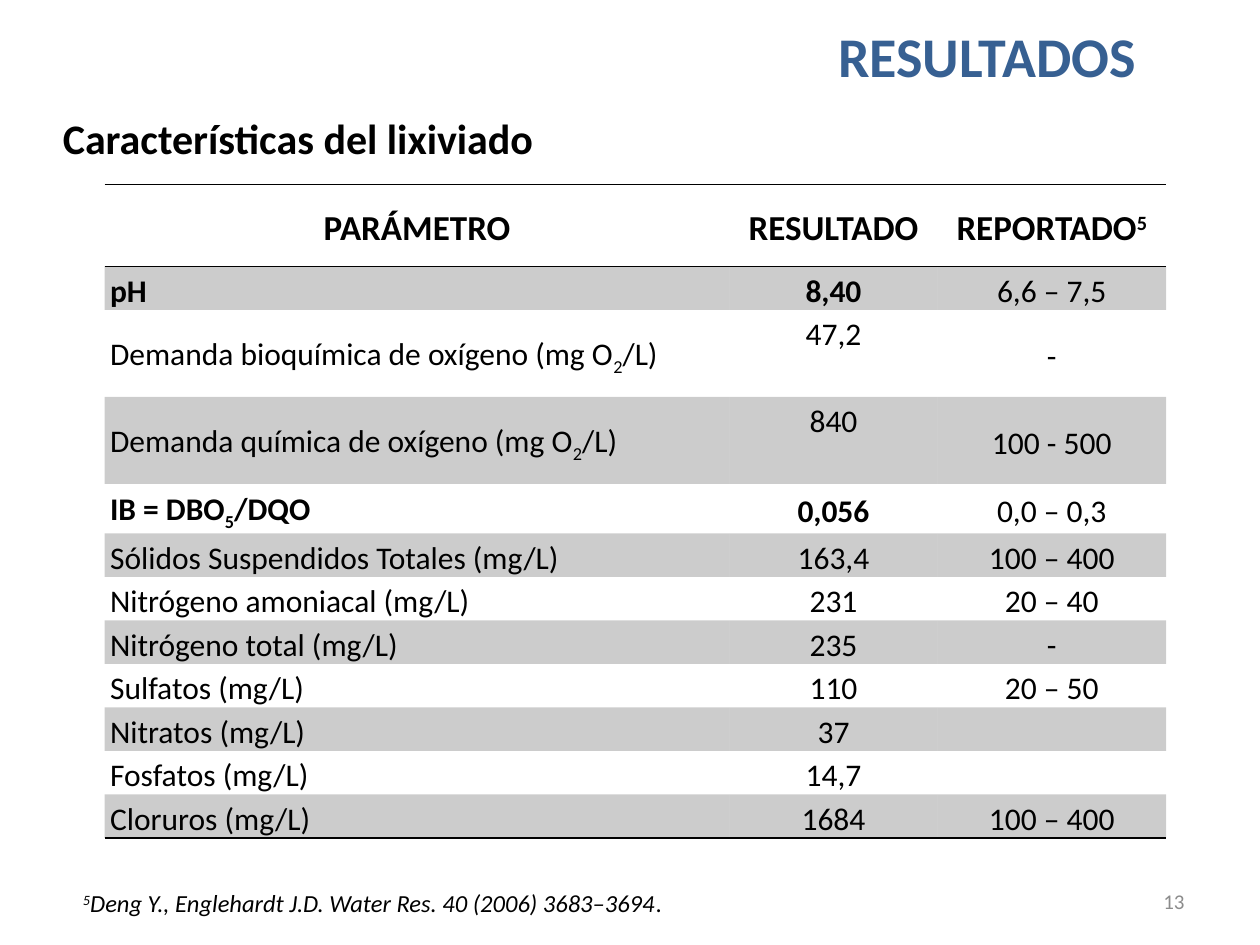
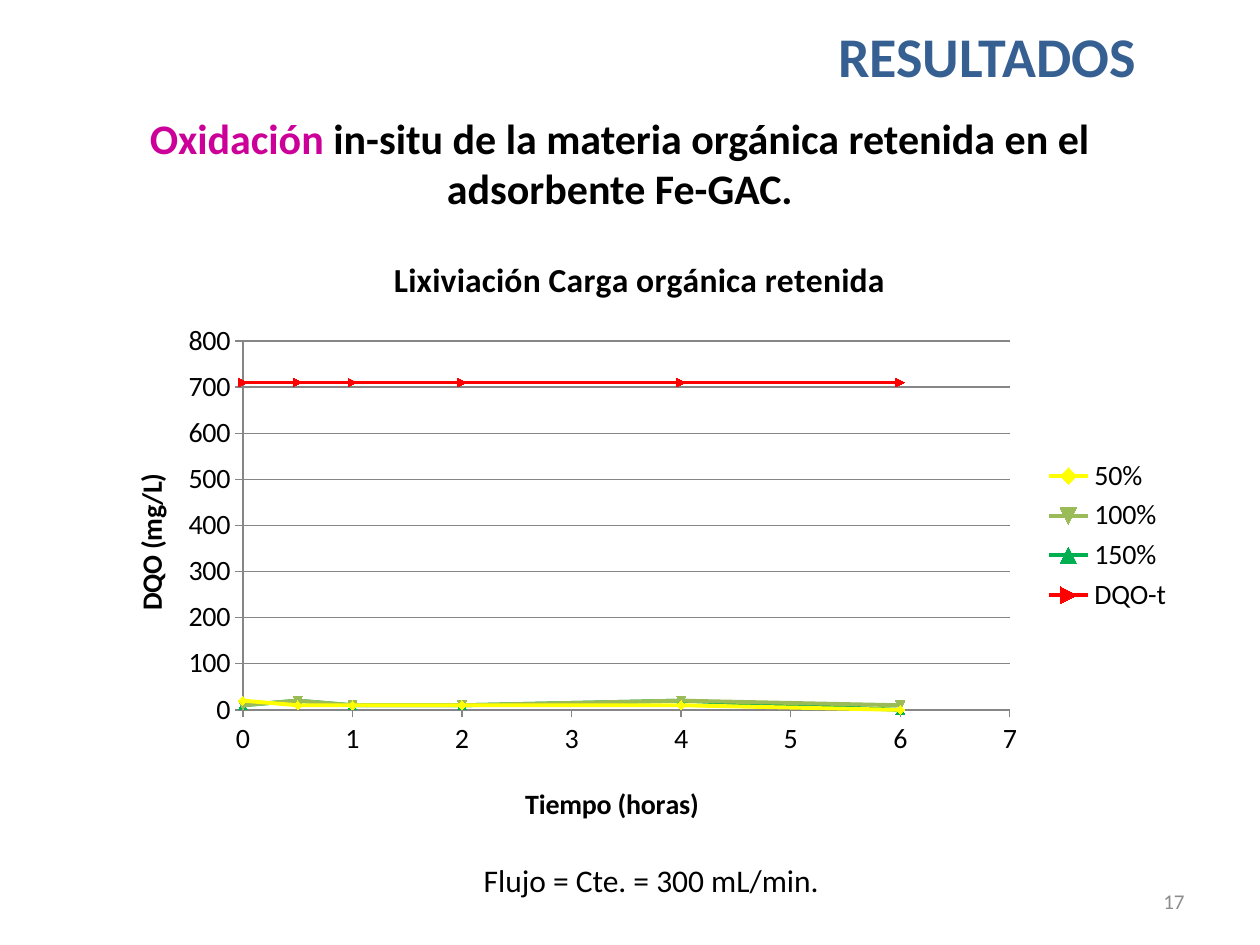
"""Builds two result slides: leachate characteristics and in-situ oxidation."""
from dataclasses import dataclass

from lxml import etree
from pptx import Presentation
from pptx.chart.data import XyChartData
from pptx.dml.color import RGBColor
from pptx.enum.chart import XL_CHART_TYPE, XL_LEGEND_POSITION, XL_TICK_MARK
from pptx.enum.text import MSO_ANCHOR, PP_ALIGN
from pptx.oxml.ns import qn
from pptx.util import Pt

LEFT, CENTER, RIGHT = PP_ALIGN.LEFT, PP_ALIGN.CENTER, PP_ALIGN.RIGHT
TOP, MIDDLE = MSO_ANCHOR.TOP, MSO_ANCHOR.MIDDLE
SMOOTH_SCATTER = XL_CHART_TYPE.XY_SCATTER_SMOOTH
LEGEND_RIGHT = XL_LEGEND_POSITION.RIGHT
TICK_OUTSIDE = XL_TICK_MARK.OUTSIDE

FONT = "Calibri"
BLACK, TITLE_BLUE, MAGENTA = "000000", "376092", "CC0099"
NUMBER_GRAY, AXIS_GRAY = "8C8C8C", "868686"
SUPERSCRIPT, SUBSCRIPT = 30, -25
PLAIN_TABLE_STYLE = "{2D5ABB26-0587-4C30-8999-92F81FD0307C}"
BAND_OPACITY = 20
HEADER_HEIGHT, ROW_HEIGHT = 46.8, 24.86


@dataclass(frozen=True)
class Run:
    """A piece of text with its own format."""
    text: str
    color: str = BLACK
    bold: bool = False
    italic: bool = False
    baseline: int = 0


@dataclass(frozen=True)
class Box:
    """A rectangle in points."""
    left: float
    top: float
    width: float
    height: float

    def lengths(self) -> tuple:
        """Return the four lengths for a shape call."""
        return Pt(self.left), Pt(self.top), Pt(self.width), Pt(self.height)


@dataclass(frozen=True)
class ResultRow:
    """One measured parameter of the leachate."""
    parameter: str
    result: str
    reported: str = ""
    subscript: str = ""
    unit: str = ""
    bold: bool = False
    height: float = ROW_HEIGHT
    result_anchor: MSO_ANCHOR = MIDDLE


@dataclass(frozen=True)
class Curve:
    """One measured series of the chart."""
    name: str
    color: str
    values: tuple


RESULT_ROWS = (
    ResultRow("pH", "8,40", "6,6 – 7,5", bold=True),
    ResultRow("Demanda bioquímica de oxígeno (mg O", "47,2", "-", "2", "/L)",
              height=2 * ROW_HEIGHT, result_anchor=TOP),
    ResultRow("Demanda química de oxígeno (mg O", "840", "100 - 500", "2", "/L)",
              height=2 * ROW_HEIGHT, result_anchor=TOP),
    ResultRow("IB = DBO", "0,056", "0,0 – 0,3", "5", "/DQO", bold=True, height=28),
    ResultRow("Sólidos Suspendidos Totales (mg/L)", "163,4", "100 – 400"),
    ResultRow("Nitrógeno amoniacal (mg/L)", "231", "20 – 40"),
    ResultRow("Nitrógeno total (mg/L)", "235", "-"),
    ResultRow("Sulfatos (mg/L)", "110", "20 – 50"),
    ResultRow("Nitratos (mg/L)", "37"),
    ResultRow("Fosfatos (mg/L)", "14,7"),
    ResultRow("Cloruros (mg/L)", "1684", "100 – 400"),
)
HOURS = (0, 0.5, 1, 2, 4, 6)
CURVES = (
    Curve("50%", "FFFF00", (20, 10, 10, 10, 10, 0)),
    Curve("100%", "9BBB59", (10, 20, 10, 10, 20, 10)),
    Curve("150%", "00B050", (10, 20, 10, 10, 20, 0)),
    Curve("DQO-t", "FF0000", (710,) * len(HOURS)),
)


def rgb(color: str) -> RGBColor:
    """Turn a hex string into a colour."""
    return RGBColor.from_string(color)


def format_font(font, size: float, color: str = BLACK, bold: bool = False,
                italic: bool = False) -> None:
    """Set the deck font with a size, colour and style."""
    font.name, font.size = FONT, Pt(size)
    font.bold, font.italic = bold, italic
    font.color.rgb = rgb(color)


def write_runs(paragraph, runs: tuple, size: float, align=LEFT) -> None:
    """Write formatted runs into a paragraph."""
    paragraph.alignment = align
    for piece in runs:
        run = paragraph.add_run()
        run.text = piece.text
        format_font(run.font, size, piece.color, piece.bold, piece.italic)
        if piece.baseline:
            run._r.get_or_add_rPr().set("baseline", str(piece.baseline * 1000))


def add_text(slide, box: Box, *runs: Run, size: float, align=LEFT, anchor=TOP) -> None:
    """Add a wrapping text box."""
    text_frame = slide.shapes.add_textbox(*box.lengths()).text_frame
    text_frame.word_wrap = True
    text_frame.vertical_anchor = anchor
    write_runs(text_frame.paragraphs[0], runs, size, align)


def add_result_slide(presentation, number: int):
    """Add a blank slide with the shared title and slide number."""
    slide = presentation.slides.add_slide(presentation.slide_layouts[6])
    add_text(slide, Box(462.2, 8.6, 203.8, 46), Run("RESULTADOS", TITLE_BLUE, bold=True),
             size=32, align=CENTER)
    add_text(slide, Box(516.2, 500.4, 167.8, 28.8), Run(str(number), NUMBER_GRAY),
             size=12, align=RIGHT, anchor=MIDDLE)
    return slide


def fill_cell(cell, runs: tuple, size: float, align=CENTER, anchor=MIDDLE,
              borders: tuple = (), banded: bool = False) -> None:
    """Write a cell and set its margins, rules and band."""
    cell.margin_left = cell.margin_right = Pt(3.1)
    cell.margin_top = cell.margin_bottom = 0
    cell.vertical_anchor = anchor
    paragraph = cell.text_frame.paragraphs[0]
    paragraph.line_spacing = 1.15
    paragraph.font.size = Pt(size)
    write_runs(paragraph, runs, size, align)
    properties = cell._tc.get_or_add_tcPr()
    for side in borders:
        line = etree.SubElement(properties, qn(f"a:{side}"), w=str(Pt(1)))
        fill = etree.SubElement(line, qn("a:solidFill"))
        etree.SubElement(fill, qn("a:srgbClr"), val=BLACK)
    if banded:
        cell.fill.solid()
        cell.fill.fore_color.rgb = rgb(BLACK)
        color = properties.find(f"{qn('a:solidFill')}/{qn('a:srgbClr')}")
        etree.SubElement(color, qn("a:alpha"), val=str(BAND_OPACITY * 1000))
    else:
        cell.fill.background()


def add_results_table(slide) -> None:
    """Add the table of leachate parameters."""
    heights = [HEADER_HEIGHT] + [row.height for row in RESULT_ROWS]
    box = Box(59.8, 105.4, 606.6, sum(heights))
    table = slide.shapes.add_table(len(heights), 3, *box.lengths()).table
    table._tbl.tblPr.find(qn("a:tableStyleId")).text = PLAIN_TABLE_STYLE
    table.first_row = table.horz_banding = False
    for column, width in zip(table.columns, (357.1, 118.8, 130.7)):
        column.width = Pt(width)
    for row, height in zip(table.rows, heights):
        row.height = Pt(height)
    headings = (
        (Run("PARÁMETRO", bold=True),),
        (Run("RESULTADO", bold=True),),
        (Run("REPORTADO", bold=True), Run("5", bold=True, baseline=SUPERSCRIPT)),
    )
    for column, runs in enumerate(headings):
        fill_cell(table.cell(0, column), runs, 20, borders=("lnT", "lnB"))
    for index, row in enumerate(RESULT_ROWS, start=1):
        borders = ("lnB",) if index == len(RESULT_ROWS) else ()
        shared = {"size": 18, "borders": borders, "banded": index % 2 == 1}
        parameter = [Run(row.parameter, bold=row.bold)]
        if row.subscript:
            parameter += [Run(row.subscript, bold=row.bold, baseline=SUBSCRIPT),
                          Run(row.unit, bold=row.bold)]
        reported = (Run(row.reported),) if row.reported else ()
        fill_cell(table.cell(index, 0), tuple(parameter), align=LEFT, **shared)
        fill_cell(table.cell(index, 1), (Run(row.result, bold=row.bold),),
                  anchor=row.result_anchor, **shared)
        fill_cell(table.cell(index, 2), reported, **shared)


def place_part(element, position: int, **fractions: float) -> None:
    """Give a chart part a manual layout in fractions of the chart."""
    for old_layout in element.findall(qn("c:layout")):
        element.remove(old_layout)
    layout = etree.Element(qn("c:layout"))
    manual = etree.SubElement(layout, qn("c:manualLayout"))
    if "w" in fractions:
        etree.SubElement(manual, qn("c:layoutTarget"), val="inner")
    for mode in ("xMode", "yMode"):
        etree.SubElement(manual, qn(f"c:{mode}"), val="edge")
    for name, value in fractions.items():
        etree.SubElement(manual, qn(f"c:{name}"), val=str(value))
    element.insert(position, layout)


def format_axis(axis, title: str, maximum: float, unit: float, left: float,
                top: float) -> None:
    """Set the scale, lines and placed title of an axis."""
    axis.minimum_scale, axis.maximum_scale, axis.major_unit = 0, maximum, unit
    axis.major_tick_mark = TICK_OUTSIDE
    axis.format.line.color.rgb = rgb(AXIS_GRAY)
    axis.format.line.width = Pt(0.75)
    format_font(axis.tick_labels.font, 16)
    write_runs(axis.axis_title.text_frame.paragraphs[0], (Run(title, bold=True),), 16, CENTER)
    place_part(axis.axis_title._element, 1, x=left, y=top)


def add_oxidation_chart(slide) -> None:
    """Add the chart of retained organic load against time."""
    data = XyChartData()
    for curve in CURVES:
        series = data.add_series(curve.name)
        for hour, value in zip(HOURS, curve.values):
            series.add_data_point(hour, value)
    box = Box(54, 131.8, 623.5, 348.5)
    chart = slide.shapes.add_chart(SMOOTH_SCATTER, *box.lengths(), data).chart
    format_font(chart.font, 16)
    chart.has_title = True
    write_runs(chart.chart_title.text_frame.paragraphs[0],
               (Run("Lixiviación Carga orgánica retenida", bold=True),), 19.2, CENTER)
    chart.has_legend = True
    chart.legend.position = LEGEND_RIGHT
    chart.legend.include_in_layout = False
    format_font(chart.legend.font, 16)
    time_axis, load_axis = chart.category_axis, chart.value_axis
    format_axis(time_axis, "Tiempo (horas)", 7, 1, 0.39, 0.9)
    format_axis(load_axis, "DQO (mg/L)", 800, 100, 0.03, 0.39)
    load_axis.axis_title.text_frame._txBody.bodyPr.set("rot", "-5400000")
    time_axis.has_major_gridlines = False
    load_axis.has_major_gridlines = True
    gridline = load_axis.major_gridlines.format.line
    gridline.color.rgb = rgb(AXIS_GRAY)
    gridline.width = Pt(0.75)
    plot = chart.plots[0]
    plot.vary_by_categories = False
    place_part(chart._chartSpace.chart.plotArea, 0, x=0.136, y=0.181, w=0.703, h=0.605)
    for index, (series, curve) in enumerate(zip(plot.series, CURVES), start=1):
        series._element.find(qn("c:idx")).set("val", str(index))
        series.smooth = True
        series.format.line.color.rgb = rgb(curve.color)
        series.format.line.width = Pt(2.25)
        series.marker.size = 5
        series.marker.format.fill.solid()
        series.marker.format.fill.fore_color.rgb = rgb(curve.color)
        series.marker.format.line.color.rgb = rgb(curve.color)


def build_characteristics_slide(presentation) -> None:
    """Build the slide with the leachate characteristics."""
    slide = add_result_slide(presentation, 13)
    add_text(slide, Box(28.8, 60.5, 637.2, 36), Run("Características del lixiviado", bold=True),
             size=24)
    add_results_table(slide)
    add_text(slide, Box(40.3, 504, 671, 24.5),
             Run("5", italic=True, baseline=SUPERSCRIPT),
             Run("Deng Y., Englehardt J.D. Water Res. 40 (2006) 3683–3694", italic=True),
             Run("."), size=14)


def build_oxidation_slide(presentation) -> None:
    """Build the slide with the oxidation chart."""
    slide = add_result_slide(presentation, 17)
    add_text(slide, Box(42.5, 60.5, 623.5, 65.5),
             Run("Oxidación ", MAGENTA, bold=True),
             Run("in-situ de la materia orgánica retenida en el adsorbente Fe-GAC.", bold=True),
             size=24, align=CENTER)
    add_text(slide, Box(269.3, 488.2, 232.6, 51), Run("Flujo = Cte. = 300 mL/min."), size=18)
    add_oxidation_chart(slide)


def main() -> None:
    """Build and save the presentation."""
    presentation = Presentation()
    presentation.slide_width, presentation.slide_height = Pt(720), Pt(540)
    build_characteristics_slide(presentation)
    build_oxidation_slide(presentation)
    presentation.save("out.pptx")


if __name__ == "__main__":
    main()
